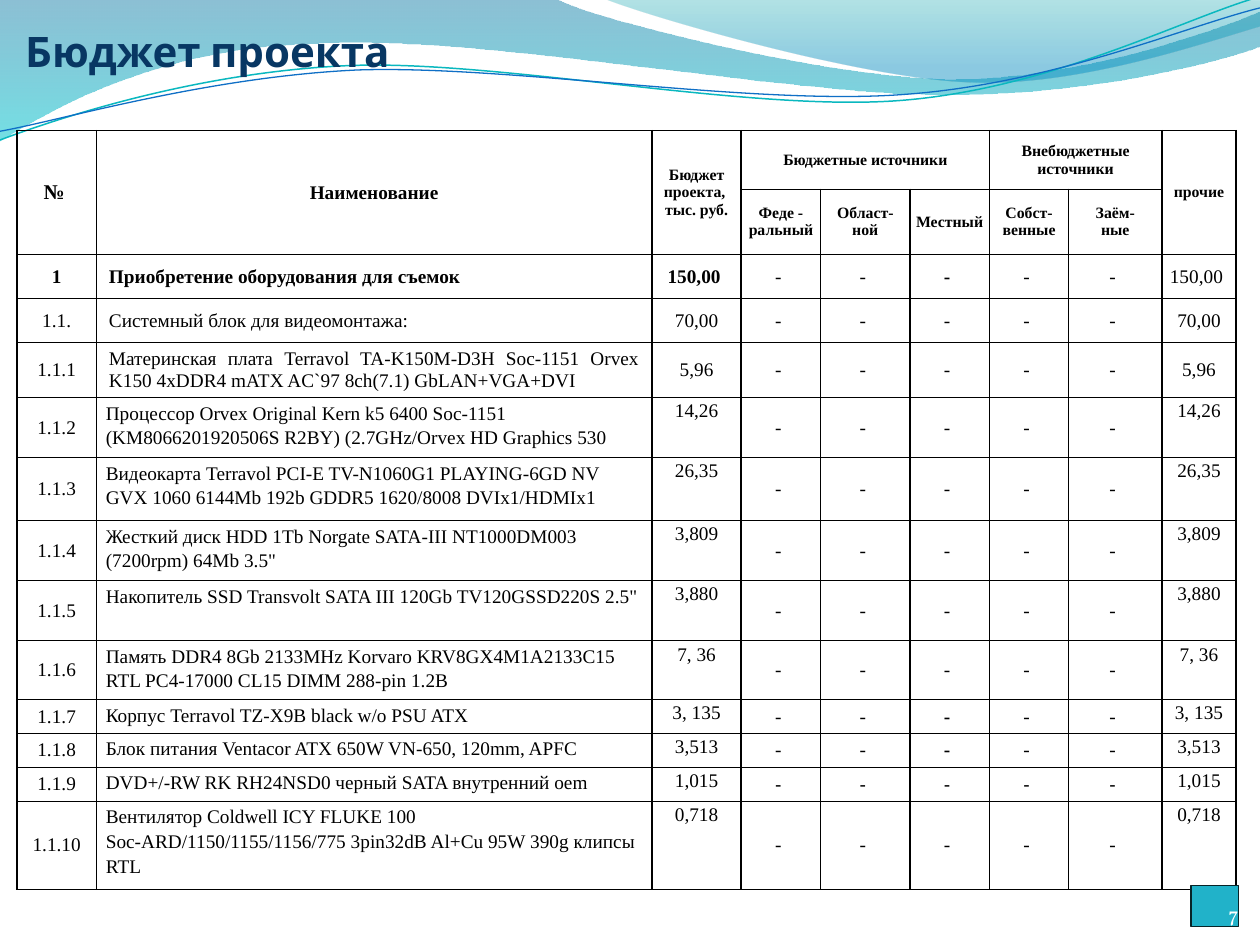
from dataclasses import dataclass

from lxml import etree
from pptx import Presentation
from pptx import util as u
from pptx.dml.color import RGBColor
from pptx.enum import shapes, text
from pptx.oxml import ns


@dataclass(frozen=True)
class Theme:
    title: str = "083763"
    ink: str = "000000"
    paper: str = "FFFFFF"
    badge: str = "21B2C9"
    badge_edge: str = "072428"
    teal_line: str = "0AB8BF"
    blue_line: str = "0F6FC6"
    # Gradient stops: position, colour, opacity in percent
    wide_wave: tuple = ((0, "0074A1", 45), (100, "00C6CF", 55))
    right_wave: tuple = ((0, "00A1A9", 30), (80, "008BBF", 45))
    title_font: str = "Cabin"
    table_font: str = "Times New Roman"
    dash_font: str = "Arial"
    badge_font: str = "Vollkorn"
    title_size: float = 24
    number_size: float = 12
    body_size: float = 11
    head_size: float = 9


THEME = Theme()
CENTER, LEFT = text.PP_ALIGN.CENTER, text.PP_ALIGN.LEFT
RIGHT, JUSTIFY = text.PP_ALIGN.RIGHT, text.PP_ALIGN.JUSTIFY
MIDDLE, TOP, BOTTOM = text.MSO_ANCHOR.MIDDLE, text.MSO_ANCHOR.TOP, text.MSO_ANCHOR.BOTTOM

# Waves: a start point, then lines (2 numbers) and Bezier curves (6 numbers)
WIDE_WAVE = [(0, 0), (317, -1), (343, 12, 478, 45, 546, 45), (614, 45, 690, 19, 720, 6.5),
             (721, 26), (708, 32, 626, 55, 537, 54), (448, 54, 275, 20, 185, 24.5),
             (93, 26, 33, 60, -1, 81)]
RIGHT_WAVE = [(345, -1), (366, 8, 491, 45, 554, 47), (616, 50, 692, 23, 720, 15), (720, 0)]
TEAL_CURVE = [(0, 80), (34.5, 67, 114, 41, 199.5, 37.5), (284.5, 34, 427, 64, 513.5, 57.5),
              (600, 51, 675.5, 11, 718.5, -1.5)]
BLUE_CURVE = [(0, 75), (34, 69, 118, 44, 204, 40), (290, 37, 430, 60.5, 516, 54),
              (602, 48, 677.5, 15, 720, 4.5)]

COLUMN_WIDTHS = [45.4, 317.5, 51, 45.4, 51, 45.4, 45.4, 53.2, 42.5]
ROW_HEIGHTS = [33.6, 37.2, 25.2, 25.2, 31.4, 34.3, 36, 34.3, 34.3, 33.7, 19.4, 19.4, 19.4, 50.3]
PAD = 2  # space above and below the text of a cell

# Heading cells: row, column, rows spanned, columns spanned, text, size
HEADINGS = [
    (0, 0, 2, 1, "№ ", THEME.number_size),
    (0, 1, 2, 1, "Наименование", THEME.body_size),
    (0, 2, 2, 1, "Бюджет проекта, \vтыс. руб.", THEME.head_size),
    (0, 3, 1, 3, "Бюджетные источники", THEME.head_size),
    (0, 6, 1, 2, "Внебюджетные источники", THEME.head_size),
    (0, 8, 2, 1, "прочие", THEME.head_size),
    (1, 3, 1, 1, "Феде -\nральный", THEME.head_size),
    (1, 4, 1, 1, "Област-\nной", THEME.head_size),
    (1, 5, 1, 1, "Местный", THEME.head_size),
    (1, 6, 1, 1, "Собст-\nвенные", THEME.head_size),
    (1, 7, 1, 1, "Заём-\nные", THEME.head_size),
]

# Budget lines: number, name, amount
ITEMS = [
    ("1", "Приобретение оборудования для съемок ", "150,00"),
    ("1.1.", "Системный блок для видеомонтажа:", "70,00"),
    ("1.1.1", "Материнская плата Terravol TA-K150M-D3H Soc-1151 Orvex "
              "K150 4xDDR4 mATX AC`97 8ch(7.1) GbLAN+VGA+DVI", "5,96"),
    ("1.1.2", "Процессор Orvex Original Kern k5 6400 Soc-1151 "
              "(KM8066201920506S R2BY) (2.7GHz/Orvex HD Graphics 530", "14,26"),
    ("1.1.3", "Видеокарта Terravol PCI-E TV-N1060G1 PLAYING-6GD NV "
              "GVX 1060 6144Mb 192b GDDR5 1620/8008 DVIx1/HDMIx1", "26,35"),
    ("1.1.4", "Жесткий диск HDD 1Tb Norgate SATA-III NT1000DM003 (7200rpm) 64Mb 3.5\"", "3,809"),
    ("1.1.5", "Накопитель SSD Transvolt SATA III 120Gb TV120GSSD220S 2.5\"", "3,880"),
    ("1.1.6", "Память DDR4 8Gb 2133MHz Korvaro KRV8GX4M1A2133C15 "
              "RTL PC4-17000 CL15 DIMM 288-pin 1.2В", "7, 36"),
    ("1.1.7", "Корпус Terravol TZ-X9B black w/o PSU ATX", "3, 135"),
    ("1.1.8", "Блок питания Ventacor ATX 650W VN-650, 120mm, APFC", "3,513"),
    ("1.1.9", "DVD+/-RW RK RH24NSD0 черный SATA внутренний oem", "1,015"),
    ("1.1.10", "Вентилятор Coldwell ICY FLUKE 100 "
               "Soc-ARD/1150/1155/1156/775 3pin32dB Al+Cu 95W 390g клипсы RTL", "0,718"),
]
BOLD_LOCAL_DASHES = ("1", "1.1.7", "1.1.8")


def color(value):
    return RGBColor.from_string(value)


def format_text(frame, font, size, ink, bold=False, align=LEFT, spacing=None):
    for paragraph in frame.paragraphs:
        paragraph.alignment = align
        if spacing:
            paragraph.line_spacing = spacing
        for run in paragraph.runs:
            run.font.name, run.font.size, run.font.bold = font, u.Pt(size), bold
            run.font.color.rgb = color(ink)


def set_margins(target, left, top, right, bottom):
    target.margin_left, target.margin_top = u.Pt(left), u.Pt(top)
    target.margin_right, target.margin_bottom = u.Pt(right), u.Pt(bottom)


def add_outline(slide, outline, close):
    """Build the outline from its end points, then bend the curved segments."""
    start, *segments = [[u.Pt(value) for value in segment] for segment in outline]
    builder = slide.shapes.build_freeform(*start)
    builder.add_line_segments([segment[-2:] for segment in segments], close=close)
    shape = builder.convert_to_shape()
    shape.shadow.inherit = False
    lines = list(shape._element.iter(ns.qn("a:lnTo")))
    for line, segment in zip(lines, segments):
        if len(segment) == 6:
            curve = etree.Element(ns.qn("a:cubicBezTo"))
            for x, y in zip(segment[::2], segment[1::2]):
                etree.SubElement(curve, ns.qn("a:pt"), x=str(x - builder.shape_offset_x),
                                 y=str(y - builder.shape_offset_y))
            line.getparent().replace(line, curve)
    return shape


def add_wave(slide, outline, stops):
    shape = add_outline(slide, outline, True)
    shape.line.fill.background()
    gradient = etree.Element(ns.qn("a:gradFill"), rotWithShape="1")
    stop_list = etree.SubElement(gradient, ns.qn("a:gsLst"))
    for position, value, opacity in stops:
        stop = etree.SubElement(stop_list, ns.qn("a:gs"), pos=str(position * 1000))
        tint = etree.SubElement(stop, ns.qn("a:srgbClr"), val=value)
        etree.SubElement(tint, ns.qn("a:alpha"), val=str(opacity * 1000))
    etree.SubElement(gradient, ns.qn("a:lin"), ang="5400000", scaled="0")
    shape._element.spPr.find(ns.qn("a:custGeom")).addnext(gradient)


def add_curve(slide, outline, value, width):
    shape = add_outline(slide, outline, False)
    shape.fill.background()
    shape.line.color.rgb, shape.line.width = color(value), u.Pt(width)


def add_title(slide, words):
    box = slide.shapes.add_textbox(u.Pt(14.4), u.Pt(9.4), u.Pt(646.5), u.Pt(33.8))
    frame = box.text_frame
    frame.word_wrap, frame.vertical_anchor = True, BOTTOM
    set_margins(frame, 0, 3.6, 0, 0)
    frame.text = words
    format_text(frame, THEME.title_font, THEME.title_size, THEME.title, bold=True)


def set_borders(cell):
    properties = cell._tc.get_or_add_tcPr()
    for index, side in enumerate(("a:lnL", "a:lnR", "a:lnT", "a:lnB")):
        line = etree.Element(ns.qn(side), w=str(u.Pt(1)))
        fill = etree.SubElement(line, ns.qn("a:solidFill"))
        etree.SubElement(fill, ns.qn("a:srgbClr"), val=THEME.ink)
        properties.insert(index, line)


def fill_cell(cell, words, margins, anchor=MIDDLE, font=THEME.table_font,
              size=THEME.body_size, **style):
    cell.text_frame.text = words
    cell.vertical_anchor = anchor
    set_margins(cell, *margins)
    format_text(cell.text_frame, font, size, THEME.ink, **style)


def fill_item(table, row, number, name, amount):
    heading = number == "1"
    part = row > 4  # single parts below the first are set at the top of the row
    roomy = (7.2, PAD, 7.2, PAD)
    fill_cell(table.cell(row, 0), number, roomy, bold=heading, align=CENTER)
    if part:
        fill_cell(table.cell(row, 1), name, (5.4, 1.2, 5, 1.2), TOP, spacing=1.15)
    else:
        fill_cell(table.cell(row, 1), name, roomy, bold=heading, align=JUSTIFY)
    for column in (2, 8):
        margins = (5, 0, 5, 0) if part else (2.9, 0, 5.8, 0) if heading else roomy
        fill_cell(table.cell(row, column), amount, margins, TOP if part else MIDDLE,
                  bold=heading and column == 2, align=CENTER, spacing=1.15 if part else None)
    for column in range(3, 8):
        pad = PAD if column == 5 else 0
        fill_cell(table.cell(row, column), "-", (2.9, pad, 5.8, pad),
                  font=THEME.dash_font if number == "1.1.9" else THEME.table_font,
                  bold=column == 5 and number in BOLD_LOCAL_DASHES, align=CENTER)


def add_budget_table(slide):
    frame = slide.shapes.add_table(len(ROW_HEIGHTS), len(COLUMN_WIDTHS), u.Pt(9.7), u.Pt(74.6),
                                   u.Pt(sum(COLUMN_WIDTHS)), u.Pt(sum(ROW_HEIGHTS)))
    table = frame.table
    table.first_row = table.horz_banding = False
    for column, width in zip(table.columns, COLUMN_WIDTHS):
        column.width = u.Pt(width)
    for row, height in zip(table.rows, ROW_HEIGHTS):
        row.height = u.Pt(height)
    for cell in table.iter_cells():
        cell.fill.background()
        set_borders(cell)
    for row, column, tall, wide, words, size in HEADINGS:
        cell = table.cell(row, column)
        if tall * wide > 1:
            cell.merge(table.cell(row + tall - 1, column + wide - 1))
        fill_cell(cell, words, (2.9, PAD, 2.9, PAD), size=size, bold=True, align=CENTER)
    for row, item in enumerate(ITEMS, start=2):
        fill_item(table, row, *item)


def add_page_badge(slide, number):
    shape = slide.shapes.add_shape(shapes.MSO_SHAPE.RECTANGLE,
                                   u.Pt(680.6), u.Pt(506), u.Pt(27.2), u.Pt(23.3))
    shape.shadow.inherit = False
    shape.fill.solid()
    shape.fill.fore_color.rgb = color(THEME.badge)
    shape.line.color.rgb, shape.line.width = color(THEME.badge_edge), u.Pt(0.75)
    frame = shape.text_frame
    frame.vertical_anchor = BOTTOM
    set_margins(frame, 0, 0, 0, 0)
    frame.text = number
    format_text(frame, THEME.badge_font, THEME.number_size, THEME.paper, align=RIGHT)


def main():
    presentation = Presentation()
    presentation.slide_width, presentation.slide_height = u.Pt(720), u.Pt(540)
    slide = presentation.slides.add_slide(presentation.slide_layouts[6])
    # Wavy header
    add_wave(slide, WIDE_WAVE, THEME.wide_wave)
    add_wave(slide, RIGHT_WAVE, THEME.right_wave)
    add_curve(slide, TEAL_CURVE, THEME.teal_line, 0.85)
    add_curve(slide, BLUE_CURVE, THEME.blue_line, 0.75)
    # Content
    add_title(slide, "Бюджет проекта")
    add_budget_table(slide)
    add_page_badge(slide, "7")
    presentation.save("out.pptx")


if __name__ == "__main__":
    main()
